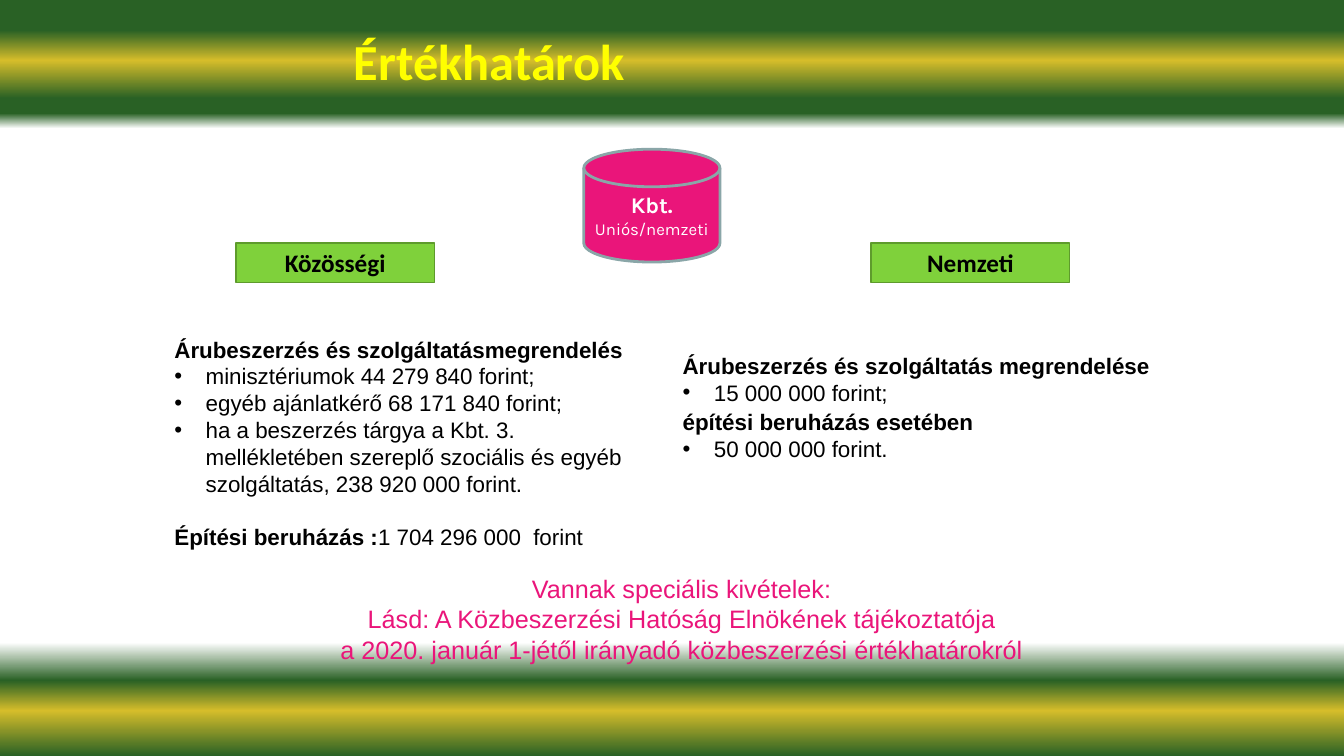
"""Build the slide on procurement value thresholds."""
from lxml.etree import SubElement
from pptx import Presentation
from pptx.dml.color import RGBColor
from pptx.enum.shapes import MSO_SHAPE
from pptx.enum.text import MSO_ANCHOR, MSO_AUTO_SIZE, PP_ALIGN
from pptx.oxml.ns import qn
from pptx.util import Inches, Pt

COLORS = {"green": "296125", "gold": "D6BD2A", "white": "FFFFFF", "black": "000000",
          "yellow": "FFFF00", "pink": "EA157A", "gray": "8AA6A8",
          "lime": "7FD13B", "lime_edge": "5E9B2C"}
INDENT = Inches(0.31)


def place(sp, left, top, width, height, anchor=MSO_ANCHOR.TOP):
    """Position a shape and return its wrapping text frame."""
    sp.left, sp.top = Inches(left), Inches(top)
    sp.width, sp.height = Inches(width), Inches(height)
    tf = sp.text_frame
    tf.word_wrap = True
    tf.auto_size = MSO_AUTO_SIZE.NONE
    tf.vertical_anchor = anchor
    return tf


def write(tf, text, size=16, color="black", font="Arial", bold=False,
          align=PP_ALIGN.LEFT, bullet=False, before=0, tail=""):
    """Add a paragraph, with an optional plain tail after bold text."""
    p = tf.paragraphs[0] if not tf.text else tf.add_paragraph()
    p.alignment, p.space_before = align, Pt(before)
    pPr = p._p.get_or_add_pPr()
    pPr.set("marL", str(INDENT if bullet else 0))
    pPr.set("indent", str(-INDENT if bullet else 0))
    if bullet:
        SubElement(pPr, qn("a:buFont"), typeface="Arial")
        SubElement(pPr, qn("a:buChar"), char="•")
    else:
        SubElement(pPr, qn("a:buNone"))
    for part, weight in ((text, bold), (tail, False)):
        if part:
            r = p.add_run()
            r.text = part
            r.font.size, r.font.name, r.font.bold = Pt(size), font, weight
            r.font.color.rgb = RGBColor.from_string(COLORS[color])
    return p


prs = Presentation()
prs.slide_width, prs.slide_height = Inches(13.33), Inches(7.5)
slide = prs.slides.add_slide(prs.slide_layouts.get_by_name("Two Content"))
title, left_list, right_list = slide.placeholders

fill = slide.background.fill
fill.gradient()
fill.gradient_angle = 270
stops = next(slide.element.iter(qn("a:gsLst")))
for gs in list(stops):
    stops.remove(gs)
for share, name in ((4, "green"), (8, "gold"), (13, "green"), (15, "green"), (17, "white"),
                    (85, "white"), (90, "green"), (94, "gold"), (100, "green")):
    gs = SubElement(stops, qn("a:gs"), pos=str(share * 1000))
    SubElement(gs, qn("a:srgbClr"), val=COLORS[name])

tf = place(title, 3.41, 0.01, 7.9, 1.25, MSO_ANCHOR.MIDDLE)
p = write(tf, "Értékhatárok", size=36, color="yellow", font="Calibri", bold=True)
p.line_spacing = 0.9

tf = place(left_list, 1.63, 3.28, 4.72, 3.13)
write(tf, "Árubeszerzés és szolgáltatásmegrendelés", bold=True)
for item in ("minisztériumok 44 279 840 forint;",
             "egyéb ajánlatkérő 68 171 840 forint;",
             "ha a beszerzés tárgya a Kbt. 3. mellékletében szereplő szociális és egyéb "
             "szolgáltatás, 238 920 000 forint."):
    write(tf, item, bullet=True)
write(tf, "Építési beruházás :", bold=True, before=18.5, tail="1 704 296 000  forint")

tf = place(right_list, 6.67, 3.44, 5, 1.21)
for heading, limit, gap in (
        ("Árubeszerzés és szolgáltatás megrendelése", "15 000 000 forint;", 0),
        ("építési beruházás esetében", "50 000 000 forint.", 2)):
    write(tf, heading, bold=True, before=gap)
    write(tf, limit, bullet=True)

boxes = (
    (MSO_SHAPE.FLOWCHART_MAGNETIC_DISK, (5.79, 1.48, 1.35, 1.12), "pink", "gray", 2,
     (("Kbt.", 16, True), ("Uniós/nemzeti", 12, False)), "Karla", "white"),
    (MSO_SHAPE.RECTANGLE, (2.34, 2.41, 1.97, 0.39), "lime", "lime_edge", 1,
     (("Közösségi", 18, True),), "Calibri", "black"),
    (MSO_SHAPE.RECTANGLE, (8.64, 2.41, 1.97, 0.39), "lime", "lime_edge", 1,
     (("Nemzeti", 18, True),), "Calibri", "black"))
for kind, frame, face, edge, weight, lines, font, ink in boxes:
    sp = slide.shapes.add_shape(kind, 0, 0, 0, 0)
    sp.shadow.inherit = False
    sp.fill.solid()
    sp.fill.fore_color.rgb = RGBColor.from_string(COLORS[face])
    sp.line.color.rgb = RGBColor.from_string(COLORS[edge])
    sp.line.width = Pt(weight)
    tf = place(sp, *frame, MSO_ANCHOR.MIDDLE)
    for text, size, bold in lines:
        write(tf, text, size=size, color=ink, font=font, bold=bold, align=PP_ALIGN.CENTER)

tf = place(slide.shapes.add_textbox(0, 0, 0, 0), 2.39, 5.64, 8.74, 1.01)
for text in ("Vannak speciális kivételek:",
             "Lásd: A Közbeszerzési Hatóság Elnökének tájékoztatója",
             "a 2020. január 1-jétől irányadó közbeszerzési értékhatárokról"):
    write(tf, text, size=18, color="pink", align=PP_ALIGN.CENTER)

prs.save("out.pptx")
